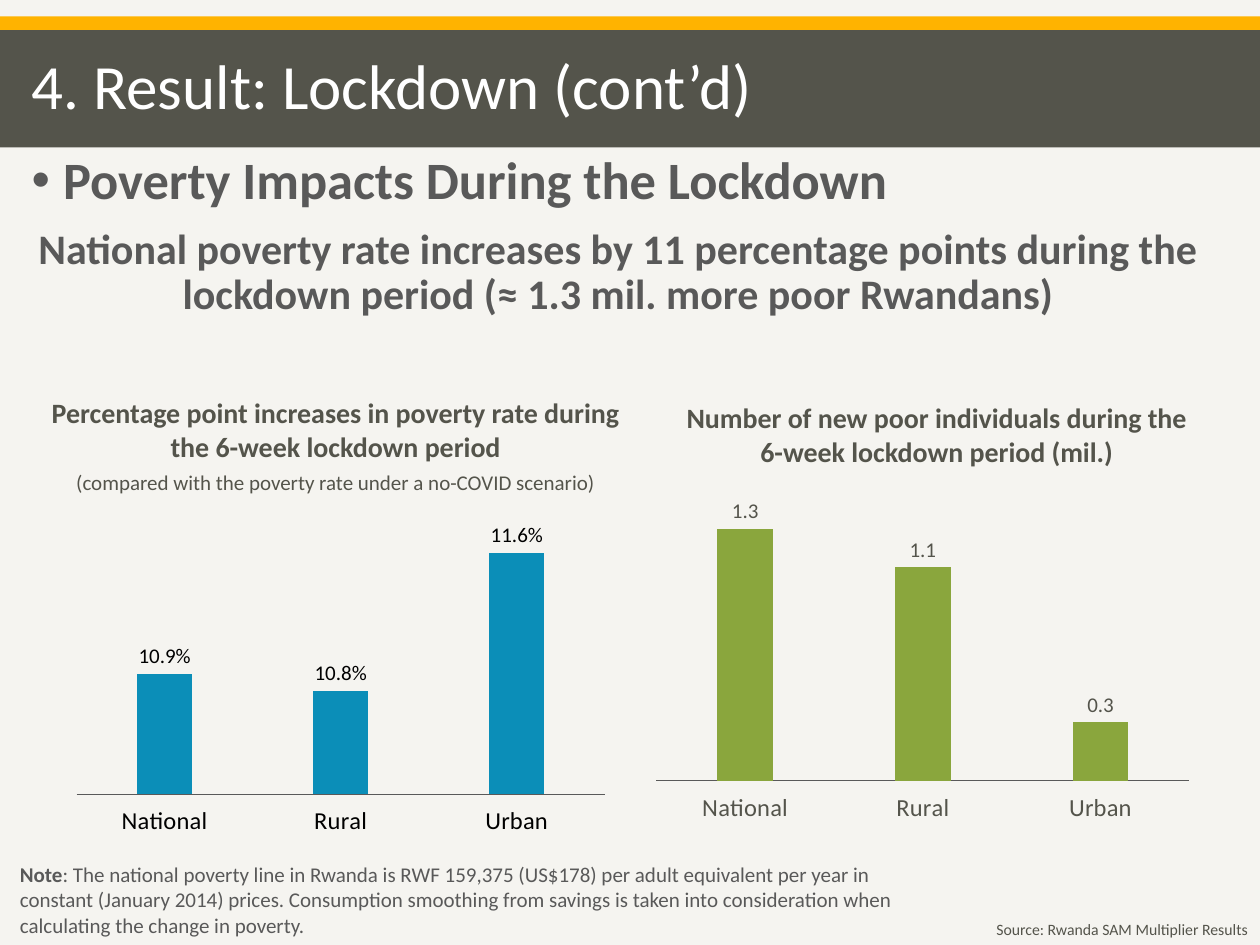
from lxml import etree
from pptx import Presentation
from pptx.chart.data import CategoryChartData
from pptx.dml.color import RGBColor
from pptx.enum.chart import XL_CHART_TYPE as ChartType, XL_LABEL_POSITION as LabelPos
from pptx.enum.chart import XL_TICK_LABEL_POSITION as TickLabel, XL_TICK_MARK as TickMark
from pptx.enum.shapes import MSO_SHAPE as Shape
from pptx.enum.text import MSO_ANCHOR as Anchor, PP_ALIGN as Align
from pptx.oxml import parse_xml
from pptx.oxml.ns import nsdecls, qn
from pptx.util import Inches, Pt

CREAM = RGBColor(0xF5, 0xF4, 0xF0)
AMBER = RGBColor(0xFF, 0xB3, 0x00)
OLIVE = RGBColor(0x54, 0x54, 0x4B)
GRAY = RGBColor(0x59, 0x59, 0x59)
WHITE = RGBColor(0xFF, 0xFF, 0xFF)
BLACK = RGBColor(0x00, 0x00, 0x00)
BLUE = RGBColor(0x0B, 0x8E, 0xB8)
GREEN = RGBColor(0x8A, 0xA6, 0x3D)
FONT = "Calibri"


def style(font, size, color, bold=False):
    font.name = FONT
    font.size = Pt(size)
    font.bold = bold
    font.color.rgb = color


def add_text(box, paragraphs, align):
    """Fill a text box with paragraphs of (text, size, color, bold) runs."""
    frame = slide.shapes.add_textbox(*map(Inches, box)).text_frame
    frame.word_wrap = True
    for i, runs in enumerate(paragraphs):
        paragraph = frame.add_paragraph() if i else frame.paragraphs[0]
        paragraph.alignment = align
        for text, *look in runs:
            run = paragraph.add_run()
            run.text = text
            style(run.font, *look)
    return frame


prs = Presentation()
prs.slide_width, prs.slide_height = Inches(10), Inches(7.5)
slide = prs.slides.add_slide(prs.slide_layouts[1])
slide.background.fill.solid()
slide.background.fill.fore_color.rgb = CREAM
title, body = slide.placeholders

# Header bands, behind the title
for position, (top, height, color) in enumerate([(0.13, 0.11, AMBER), (0.24, 0.93, OLIVE)]):
    band = slide.shapes.add_shape(Shape.RECTANGLE, 0, Inches(top), Inches(10), Inches(height))
    band.fill.solid()
    band.fill.fore_color.rgb = color
    band.line.fill.background()
    band.shadow.inherit = False
    slide.shapes._spTree.insert(2 + position, band._element)

# Title
title.left, title.top, title.width, title.height = map(Inches, (0.15, 0.24, 8.83, 0.93))
title.text_frame.text = "4. Result: Lockdown (cont’d)"
title.text_frame.vertical_anchor = Anchor.MIDDLE
heading = title.text_frame.paragraphs[0]
heading.alignment = Align.LEFT
heading.line_spacing = 0.9
style(heading.runs[0].font, 36, WHITE)

# Main message
body.left, body.top, body.width, body.height = map(Inches, (0.15, 1.17, 9.51, 1.92))
body.text_frame.text = (
    "Poverty Impacts During the Lockdown\n"
    "National poverty rate increases by 11 percentage points during the "
    "lockdown period (≈ 1.3 mil. more poor Rwandans)"
)
topic, finding = body.text_frame.paragraphs
for paragraph, size, indent, bullet in [(topic, 30, 0.25, "•"), (finding, 24, 0, None)]:
    props = paragraph._p.get_or_add_pPr()
    props.set("marL", str(Inches(indent)))
    props.set("indent", str(-Inches(indent)))
    if bullet:
        etree.SubElement(props, qn("a:buChar")).set("char", bullet)
    else:
        etree.SubElement(props, qn("a:buNone"))
    paragraph.line_spacing = 0.9
    paragraph.space_before = Pt(0)
    style(paragraph.runs[0].font, size, GRAY, True)
finding.space_before = Pt(10)
finding.alignment = Align.CENTER

# Charts: box, values, colors, label format, axis range, axis line width, plot area
charts = [
    ((5.05, 3.54, 4.55, 3.1), (1.3, 1.1, 0.3), GREEN, OLIVE, "#,##0.0",
     (0, 1.6), 0.75, (0.035, 0.063, 0.93, 0.794)),
    ((0.44, 3.98, 4.41, 2.66), (10.9, 10.8, 11.6), BLUE, BLACK, '0.0"%"',
     (10.2, 11.8), 0.5, (0.038, 0.051, 0.951, 0.827)),
]
for box, values, bar_color, text_color, number_format, limits, line_width, plot_area in charts:
    data = CategoryChartData()
    data.categories = ["National", "Rural", "Urban"]
    data.add_series("Series 1", values)
    chart = slide.shapes.add_chart(
        ChartType.COLUMN_CLUSTERED, *map(Inches, box), data).chart
    chart.has_legend = False
    chart.has_title = False
    style(chart.font, 14, text_color)

    plot = chart.plots[0]
    plot.gap_width, plot.overlap = 219, -27
    plot.vary_by_categories = False
    bars = plot.series[0]
    bars.format.fill.solid()
    bars.format.fill.fore_color.rgb = bar_color
    labels = bars.data_labels
    labels.show_value = True
    labels.number_format = number_format
    labels.number_format_is_linked = False
    labels.position = LabelPos.OUTSIDE_END
    style(labels.font, 12, text_color)

    regions = chart.category_axis
    regions.tick_label_position = TickLabel.LOW
    regions.major_tick_mark = TickMark.NONE
    regions.format.line.color.rgb = GRAY
    regions.format.line.width = Pt(line_width)
    style(regions.tick_labels.font, 14, text_color)
    scale = chart.value_axis
    scale.minimum_scale, scale.maximum_scale = limits
    scale.has_major_gridlines = False
    scale.visible = False

    # Fixed inner plot area
    parts = "".join(f'<c:{side}Mode val="edge"/>' for side in "xy")
    parts += "".join(f'<c:{key} val="{value}"/>' for key, value in zip("xywh", plot_area))
    layout = parse_xml(
        f'<c:layout {nsdecls("c")}><c:manualLayout><c:layoutTarget val="inner"/>'
        f"{parts}</c:manualLayout></c:layout>")
    area = chart._chartSpace.chart.plotArea
    for old in area.findall(qn("c:layout")):
        area.remove(old)
    area.insert(0, layout)

# Chart headings
add_text((5.24, 3.13, 4.39, 0.64), [
    [("Number of new poor individuals during the 6-week lockdown period (mil.)",
      16, OLIVE, True)],
], Align.CENTER)
poverty_heading = add_text((0.31, 3.09, 4.71, 0.91), [
    [("Percentage point increases in poverty rate during the 6-week lockdown period",
      16, OLIVE, True)],
    [("(compared with the poverty rate under a no-COVID scenario)", 12, OLIVE)],
], Align.CENTER)
poverty_heading.paragraphs[1].space_before = Pt(4)

# Note and source
add_text((0.06, 6.79, 7.27, 0.71), [
    [("Note", 12, GRAY, True),
     (": The national poverty line in Rwanda is RWF 159,375 (US$178) per adult equivalent "
      "per year in constant (January 2014) prices. Consumption smoothing from savings is "
      "taken into consideration when calculating the change in poverty.", 12, GRAY)],
], Align.LEFT)
add_text((7.13, 7.25, 2.87, 0.25), [
    [("Source: Rwanda SAM Multiplier Results", 9, OLIVE)],
], Align.RIGHT)

prs.save("out.pptx")
